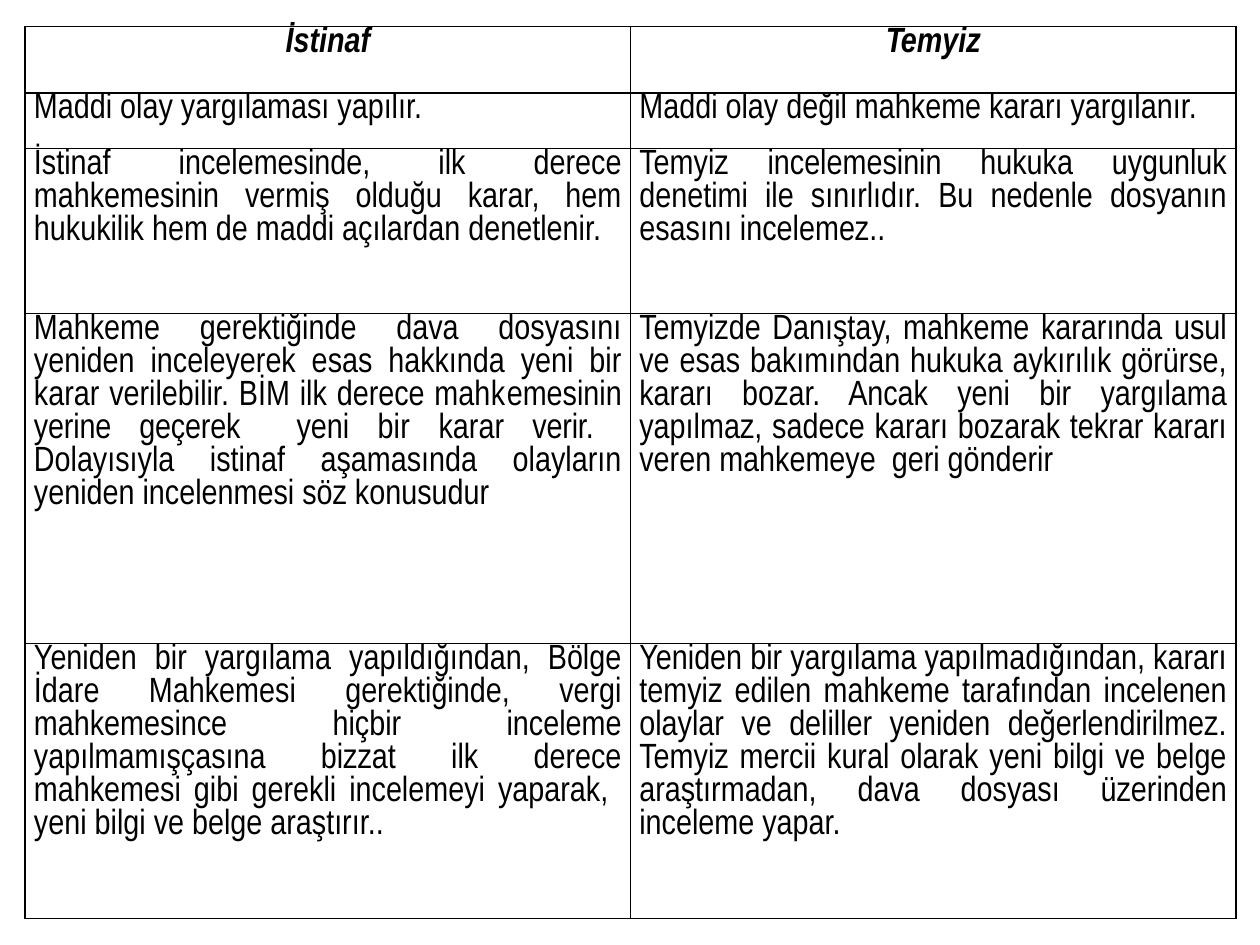
from typing import NamedTuple

from lxml.etree import SubElement
from pptx import Presentation
from pptx.dml.color import RGBColor as RGB
from pptx.enum.text import MSO_ANCHOR as Anchor, PP_ALIGN as Align
from pptx.oxml.ns import qn
from pptx.util import Inches, Pt

COLORS = {"ink": "000000", "paper": "FFFFFF"}
FONT = "Arial Narrow"


class Piece(NamedTuple):
    text: str
    spacing: float = 0  # letter spacing in points


class Row(NamedTuple):
    height: float
    istinaf: list[Piece]
    temyiz: list[Piece]


ROWS = [
    Row(0.53, [Piece("İstinaf")], [Piece("Temyiz")]),
    Row(0.44,
        [Piece("Maddi olay yargılaması yapılır.")],
        [Piece("Maddi olay değil mahkeme kararı yargılanır.")]),
    Row(1.31,
        [Piece("İstinaf incelemesinde, ilk derece mahkemesinin vermiş olduğu karar, "
               "hem hukukilik hem de maddi açılardan denetlenir.")],
        [Piece("Temyiz incelemesinin hukuka uygunluk denetimi ile sınırlıdır. "
               "Bu nedenle dosyanın esasını incelemez..")]),
    Row(2.62,
        [Piece("Mahkeme gerektiğinde dava dosyasını yeniden inceleyerek esas hakkında "
               "yeni bir karar verilebilir. BİM ilk derece mah"),
         Piece("k", 0.9), Piece("e", -1.4), Piece("mesinin "),
         Piece("yerine geçerek  ", -0.1), Piece("yeni "), Piece("bir ", 0.1),
         Piece("karar "), Piece("verir. ", -0.1),
         Piece(" Dolayısıyla istinaf aşamasında olayların yeniden incelenmesi "
               "söz konusudur")],
        [Piece("Temyizde Danıştay, mahkeme kararında usul ve esas bakımından hukuka "
               "aykırılık görürse, kararı bozar. Ancak yeni bir yargılama yapılmaz, "
               "sadece kararı bozarak tekrar kararı veren mahkemeye  geri gönderir")]),
    Row(2.18,
        [Piece("Yeniden bir yargılama yapıldığından, Bölge İdare Mahkemesi "
               "gerektiğinde, vergi mahkemesince hiçbir inceleme yapılmamışçasına "
               "bizzat ilk derece mahkemesi gibi gerekli incelemeyi yaparak,  yeni "
               "bilgi ve belge araştırır..")],
        [Piece("Yeniden bir yargılama yapılmadığından, kararı temyiz edilen mahkeme "
               "tarafından incelenen olaylar ve deliller yeniden değerlendirilmez. "
               "Temyiz mercii kural olarak yeni bilgi ve belge araştırmadan, dava "
               "dosyası üzerinden inceleme yapar.")]),
]


def set_borders(cell, width: float = 1) -> None:
    tc_pr = cell._tc.get_or_add_tcPr()
    for index, side in enumerate(("lnL", "lnR", "lnT", "lnB")):
        line = SubElement(tc_pr, qn(f"a:{side}"), w=str(Pt(width)))
        fill = SubElement(line, qn("a:solidFill"))
        SubElement(fill, qn("a:srgbClr"), val=COLORS["ink"])
        tc_pr.insert(index, line)  # borders come before the cell fill


def fill_cell(cell, pieces: list[Piece], header: bool) -> None:
    cell.fill.solid()
    cell.fill.fore_color.rgb = RGB.from_string(COLORS["paper"])
    set_borders(cell)
    cell.margin_left = cell.margin_right = Inches(0.07)
    cell.margin_top = cell.margin_bottom = 0
    cell.vertical_anchor = Anchor.TOP
    p = cell.text_frame.paragraphs[0]
    p.alignment = Align.CENTER if header else Align.JUSTIFY
    p.line_spacing = Pt(18.86)
    p.space_after = Pt(3)
    for piece in pieces:
        r = p.add_run()
        r.text = piece.text
        r.font.name = FONT
        r.font.size = Pt(20)
        r.font.bold = r.font.italic = header
        r.font.color.rgb = RGB.from_string(COLORS["ink"])
        if piece.spacing:
            r._r.get_or_add_rPr().set("spc", str(round(piece.spacing * 100)))


def main() -> None:
    prs = Presentation()
    prs.slide_width, prs.slide_height = Inches(10), Inches(7.5)
    s = prs.slides.add_slide(prs.slide_layouts[6])
    height = sum(row.height for row in ROWS)
    table = s.shapes.add_table(len(ROWS), 2, Inches(0.2), Inches(0.21),
                               Inches(9.61), Inches(height)).table
    table.first_row = table.horz_banding = False
    for i, row in enumerate(ROWS):
        table.rows[i].height = Inches(row.height)
        for j, pieces in enumerate((row.istinaf, row.temyiz)):
            fill_cell(table.cell(i, j), pieces, header=i == 0)
    prs.save("out.pptx")


if __name__ == "__main__":
    main()
